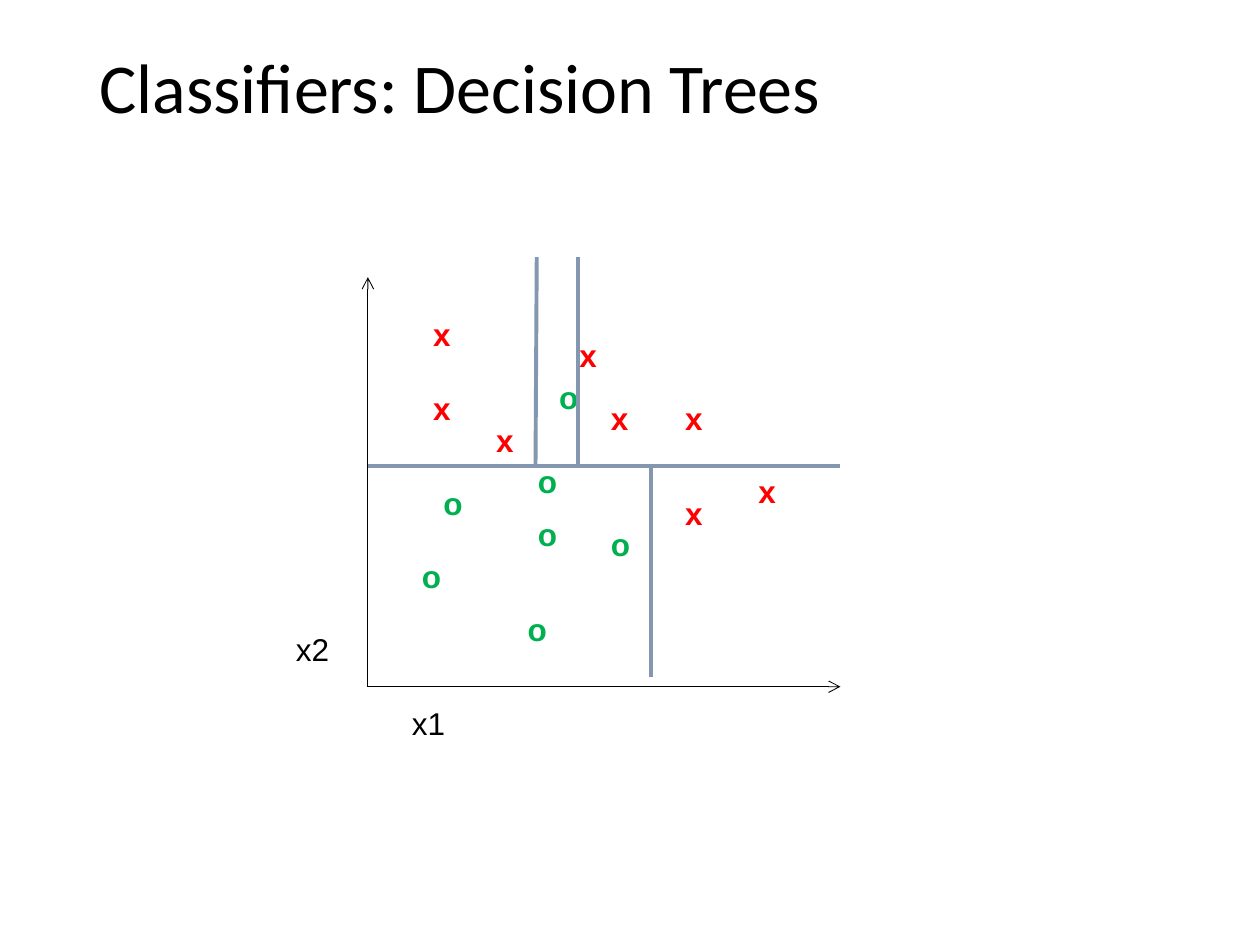
"""Build a slide showing how a decision tree splits two classes of points."""
from lxml import etree
from pptx import Presentation
from pptx.dml.color import RGBColor
from pptx.enum.shapes import MSO_CONNECTOR
from pptx.enum.text import MSO_ANCHOR, MSO_AUTO_SIZE, PP_ALIGN
from pptx.oxml.ns import qn
from pptx.util import Inches, Pt

LEFT = PP_ALIGN.LEFT
MIDDLE = MSO_ANCHOR.MIDDLE
FIT = MSO_AUTO_SIZE.SHAPE_TO_FIT_TEXT
STRAIGHT = MSO_CONNECTOR.STRAIGHT
COLORS = {"text": "000000", "x": "FF0000", "o": "00B050", "split": "8497B0"}


def put_text(frame, text, font="Arial", size=18, color="text", bold=False):
    para = frame.paragraphs[0]
    para.alignment = LEFT
    run = para.add_run()
    run.text = text
    run.font.name = font
    run.font.size = Pt(size)
    run.font.bold = bold
    run.font.color.rgb = RGBColor.from_string(COLORS[color])
    return para


def add_line(slide, ends, color, width, arrow=False):
    line = slide.shapes.add_connector(STRAIGHT, *[Inches(n) for n in ends])
    line.line.color.rgb = RGBColor.from_string(COLORS[color])
    line.line.width = Pt(width)
    if arrow:
        etree.SubElement(line.line._get_or_add_ln(), qn("a:tailEnd"), type="arrow")
    etree.SubElement(line._element.spPr, qn("a:effectLst"))


deck = Presentation()
deck.slide_width, deck.slide_height = Inches(10), Inches(7.5)
slide = deck.slides.add_slide(deck.slide_layouts[5])

title = slide.shapes.title
title.left, title.top = Inches(0.69), Inches(0)
title.width, title.height = Inches(8.62), Inches(1.45)
title.text_frame.vertical_anchor = MIDDLE
head = put_text(title.text_frame, "Classifiers: Decision Trees", font="Calibri", size=40)
head.line_spacing = 0.9

points = {
    "x": [(4.75, 3.12), (5.34, 3.12), (5.34, 3.87), (5.92, 3.7),
          (3.34, 2.45), (3.34, 3.04), (4.5, 2.62), (3.84, 3.29)],
    "o": [(4.34, 2.95), (4.75, 4.12), (3.25, 4.37), (3.42, 3.79),
          (4.09, 4.79), (4.17, 4.04), (4.17, 3.62)],
}
labels = [(mark, x, y, width, mark, True)
          for mark, width in (("x", 0.34), ("o", 0.36))
          for x, y in points[mark]]
labels += [("x2", 2.25, 4.95, 0.47, "text", False),
           ("x1", 3.17, 5.54, 0.47, "text", False)]
for text, x, y, width, color, bold in labels:
    box = slide.shapes.add_textbox(Inches(x), Inches(y), Inches(width), Inches(0.4))
    box.text_frame.word_wrap = False
    box.text_frame.auto_size = FIT
    put_text(box.text_frame, text, color=color, bold=bold)

left, right, base, split = 2.92, 6.67, 5.45, 3.7
for ends in [(left, base, left, 2.2), (left, base, right, base)]:
    add_line(slide, ends, "text", 0.5, arrow=True)

for ends in [(left, split, right, split), (5.17, split, 5.17, 5.37),
             (4.26, 2.04, 4.25, split), (4.59, 2.04, 4.59, split)]:
    add_line(slide, ends, "split", 2.25)

deck.save("out.pptx")
